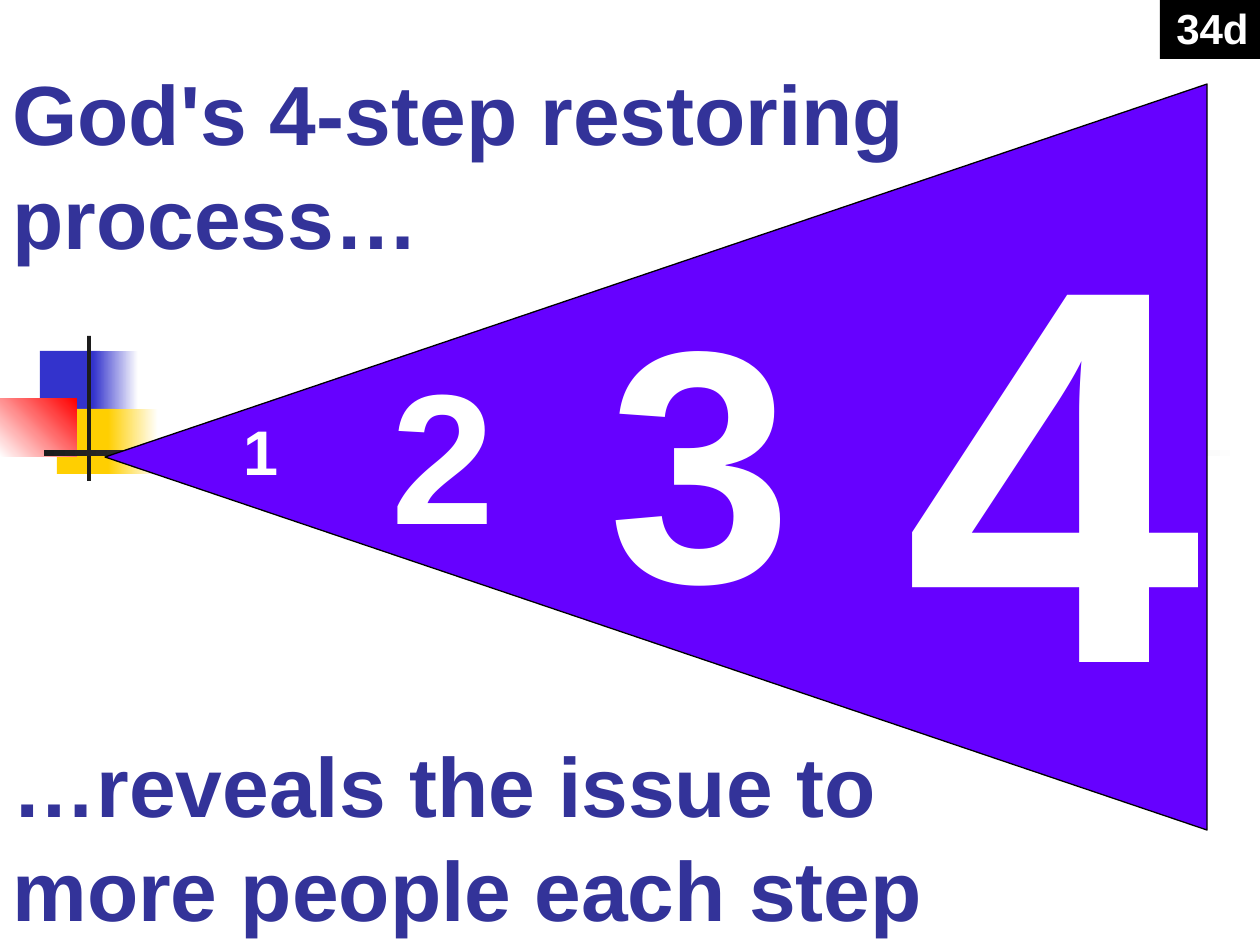
from dataclasses import dataclass
from typing import Optional

from pptx import Presentation
from pptx.dml.color import RGBColor
from pptx.enum.shapes import MSO_SHAPE
from pptx.enum.text import MSO_ANCHOR, MSO_AUTO_SIZE, PP_ALIGN
from pptx.util import Emu, Pt

PIXELS_PER_INCH = 126
FONT = "Arial"
COLORS = {
    "blue": "3333CC",
    "yellow": "FFCF01",
    "red": "FF0000",
    "charcoal": "1C1C1C",
    "violet": "6601FF",
    "navy": "333399",
    "black": "000000",
    "white": "FFFFFF",
}


@dataclass(frozen=True)
class Box:
    left: int
    top: int
    width: int
    height: int


@dataclass(frozen=True)
class Block:
    """A rectangle, plain or fading from one colour to another."""
    box: Box
    color: str
    fade_to: Optional[str] = None
    angle: int = 0


@dataclass(frozen=True)
class Label:
    text: str
    box: Box
    size: int
    color: str = "white"
    wrap: bool = False


ORNAMENT = [
    Block(Box(40, 351, 60, 65), "blue"),
    Block(Box(93, 351, 45, 65), "blue", "white"),
    Block(Box(57, 409, 58, 65), "yellow"),
    Block(Box(108, 409, 50, 65), "yellow", "white"),
    Block(Box(0, 399, 77, 58), "white", "red", 45),
    Block(Box(87, 336, 4, 145), "charcoal"),
    Block(Box(44, 450, 1197, 6), "charcoal", "white"),
]
# The triangle is described upright, then turned to point left.
TRIANGLE = Box(283, -94, 746, 1102)
HEADINGS = [
    Label("God's 4-step restoring process…", Box(0, 21, 1113, 252), 48, "navy", True),
    Label("…reveals the issue to more people each step",
          Box(0, 693, 1113, 252), 48, "navy", True),
]
STEPS = [
    Label("1", Box(231, 406, 60, 88), 36),
    Label("2", Box(379, 333, 129, 236), 106),
    Label("3", Box(596, 246, 209, 410), 189),
    Label("4", Box(892, 123, 323, 653), 305),
]
PAGE_TAG = Label("34d", Box(1160, -4, 105, 63), 24, wrap=True)


def px(value: int) -> Emu:
    return Emu(round(value * 914400 / PIXELS_PER_INCH))


def rgb(name: str) -> RGBColor:
    return RGBColor.from_string(COLORS[name])


def place(box: Box):
    return px(box.left), px(box.top), px(box.width), px(box.height)


def add_block(slide, block: Block, preset=MSO_SHAPE.RECTANGLE):
    shape = slide.shapes.add_shape(preset, *place(block.box))
    shape.shadow.inherit = False
    shape.line.fill.background()
    if block.fade_to is None:
        shape.fill.solid()
        shape.fill.fore_color.rgb = rgb(block.color)
    else:
        shape.fill.gradient()
        shape.fill.gradient_angle = block.angle
        for stop, name in zip(shape.fill.gradient_stops, (block.color, block.fade_to)):
            stop.color.rgb = rgb(name)
    return shape


def write_text(shape, label: Label, anchor=MSO_ANCHOR.TOP, align=PP_ALIGN.LEFT):
    """Fill the shape's frame and return its paragraph."""
    frame = shape.text_frame
    frame.word_wrap = label.wrap
    frame.auto_size = MSO_AUTO_SIZE.NONE
    frame.vertical_anchor = anchor
    paragraph = frame.paragraphs[0]
    paragraph.text = label.text
    paragraph.alignment = align
    paragraph.font.name = FONT
    paragraph.font.size = Pt(label.size)
    paragraph.font.bold = True
    paragraph.font.color.rgb = rgb(label.color)
    return paragraph


def add_heading(slide, label: Label) -> None:
    text_box = slide.shapes.add_textbox(*place(label.box))
    write_text(text_box, label, MSO_ANCHOR.BOTTOM).line_spacing = 1.04


def add_triangle(slide) -> None:
    triangle = add_block(slide, Block(TRIANGLE, "violet"), MSO_SHAPE.ISOSCELES_TRIANGLE)
    triangle.rotation = 270
    triangle.line.color.rgb = rgb("black")
    triangle.line.width = Pt(0.75)


def main() -> None:
    presentation = Presentation()
    presentation.slide_width = px(1260)
    presentation.slide_height = px(945)
    slide = presentation.slides.add_slide(presentation.slide_layouts[6])

    for block in ORNAMENT:
        add_block(slide, block)
    title, conclusion = HEADINGS
    add_heading(slide, title)
    add_triangle(slide)
    for step in STEPS:
        write_text(slide.shapes.add_textbox(*place(step.box)), step)
    add_heading(slide, conclusion)
    tag = add_block(slide, Block(PAGE_TAG.box, "black"))
    write_text(tag, PAGE_TAG, align=PP_ALIGN.CENTER)

    presentation.save("out.pptx")


if __name__ == "__main__":
    main()
